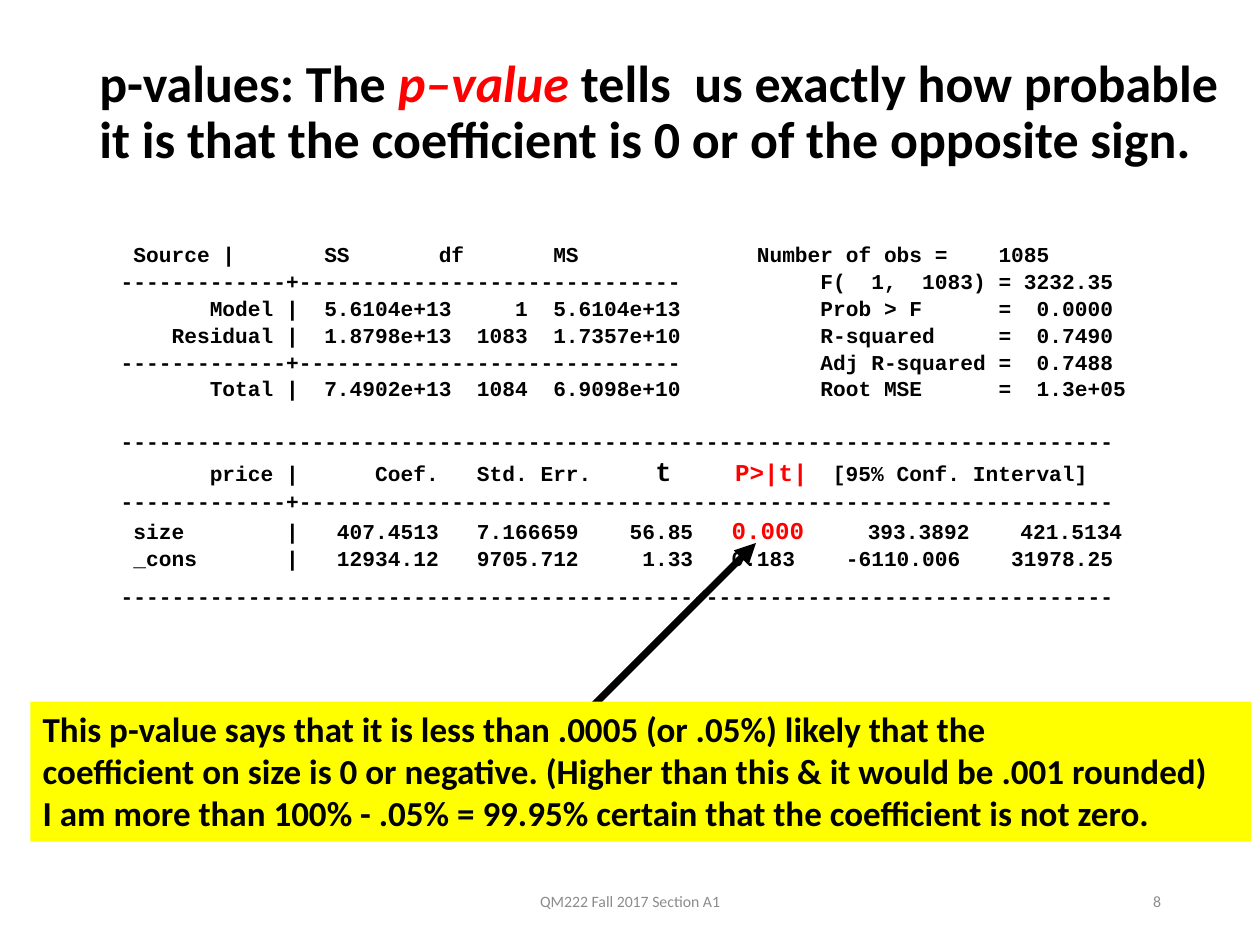
import pptx
import pptx.util
import pptx.dml.color
import pptx.enum.shapes
import pptx.enum.text
import pptx.oxml
import pptx.oxml.ns

Pt = pptx.util.Pt
ALIGN = pptx.enum.text.PP_ALIGN
ANCHOR = pptx.enum.text.MSO_ANCHOR

THEME = {
    "black": "000000", "red": "FF0000", "yellow": "FFFF00", "grey": "8C8C8C",
    "sans": "Calibri", "mono": "Courier New",
    "title": 29.7, "output": 12.1, "p_value": 13.8, "t": 15.4,
    "callout": 20, "footer": 9,
}

# Content: a paragraph is a list of (text, format changes) spans
P_VALUE = {"size": THEME["p_value"], "color": THEME["red"]}
TITLE = [[
    ("p-values: The ", {}),
    ("p–value", {"color": THEME["red"], "italic": True}),
    (" tells  us exactly how probable it is that the coefficient is 0 or of the opposite sign.", {}),
]]
RULE = "-" * 78
SPLIT = "-" * 13 + "+"
SHORT_RULE = SPLIT + "-" * 30
REGRESSION = [
    " Source |       SS       df       MS              Number of obs =    1085",
    SHORT_RULE + "           F(  1,  1083) = 3232.35",
    "       Model |  5.6104e+13     1  5.6104e+13           Prob > F      =  0.0000",
    "    Residual |  1.8798e+13  1083  1.7357e+10           R-squared     =  0.7490",
    SHORT_RULE + "           Adj R-squared =  0.7488",
    "       Total |  7.4902e+13  1084  6.9098e+10           Root MSE      =  1.3e+05",
    RULE,
    [("       price |      Coef.   Std. Err.     ", {}), ("t", {"size": THEME["t"]}),
     ("     ", {}), ("P>|t|", P_VALUE), ("  [95% Conf. Interval]", {})],
    SPLIT + "-" * 64,
    [(" size        |   407.4513   7.166659    56.85   ", {}), ("0.000", P_VALUE),
     ("     393.3892    421.5134", {})],
    " _cons       |   12934.12   9705.712     1.33   0.183    -6110.006    31978.25",
    RULE,
]
LINE_GAP = 0.8
WIDE_GAPS = {6: 15.3, 11: 7}  # space above the two full-width rules
CALLOUT = [
    "This p-value says that it is less than .0005 (or .05%) likely that the",
    "coefficient on size is 0 or negative. (Higher than this & it would be .001 rounded)",
    "I am more than 100% - .05% = 99.95% certain that the coefficient is not zero.",
]
FOOTERS = [  # text, left, width, alignment
    ("QM222 Fall 2017 Section A1", 238.5, 243, ALIGN.CENTER),
    ("8", 508.5, 162, ALIGN.RIGHT),
]


def rgb(name):
    return pptx.dml.color.RGBColor.from_string(name)


def write(box, paragraphs, size, font, color=THEME["black"], bold=True,
          align=ALIGN.LEFT, anchor=ANCHOR.TOP, wrap=True):
    frame = box.text_frame
    frame.word_wrap = wrap
    frame.vertical_anchor = anchor
    for index, content in enumerate(paragraphs):
        para = frame.paragraphs[0] if index == 0 else frame.add_paragraph()
        para.alignment = align
        for text, changes in [(content, {})] if isinstance(content, str) else content:
            span = para.add_run()
            span.text = text
            span.font.name = font
            span.font.size = Pt(changes.get("size", size))
            span.font.bold = bold
            span.font.italic = changes.get("italic", False)
            span.font.color.rgb = rgb(changes.get("color", color))
    return frame


def add_text(page, area, *content, **options):
    box = page.shapes.add_textbox(*map(Pt, area))
    return write(box, *content, **options)


deck = pptx.Presentation()
deck.slide_width, deck.slide_height = Pt(720), Pt(540)
page = deck.slides.add_slide(deck.slide_layouts[6])

# Title
title = add_text(page, (49.7, 28.8, 670.3, 104.4), TITLE, THEME["title"],
                 THEME["sans"], anchor=ANCHOR.MIDDLE)
title.margin_bottom = Pt(36)
title.paragraphs[0].line_spacing = 0.9

# Regression output
output = add_text(page, (61.9, 133.2, 625.7, 360), REGRESSION, THEME["output"], THEME["mono"])
output.margin_top = Pt(5)
for index, para in enumerate(output.paragraphs):
    para.space_before = Pt(WIDE_GAPS.get(index, LINE_GAP))

# Arrow from the callout to the p-value
arrow = page.shapes.add_connector(
    pptx.enum.shapes.MSO_CONNECTOR.STRAIGHT, Pt(334), Pt(408.2), Pt(432), Pt(310.3))
arrow.line.color.rgb = rgb(THEME["black"])
arrow.line.width = Pt(4)
head = pptx.oxml.parse_xml(
    '<a:tailEnd %s type="triangle"/>' % pptx.oxml.ns.nsdecls("a"))
arrow.line._get_or_add_ln().append(head)
arrow._element.spPr.append(
    pptx.oxml.parse_xml("<a:effectLst %s/>" % pptx.oxml.ns.nsdecls("a")))

# Callout
callout = page.shapes.add_shape(
    pptx.enum.shapes.MSO_SHAPE.RECTANGLE, Pt(17.3), Pt(401), Pt(697.7), Pt(80))
callout.shadow.inherit = False
callout.fill.solid()
callout.fill.fore_color.rgb = rgb(THEME["yellow"])
callout.line.fill.background()
write(callout, CALLOUT, THEME["callout"], THEME["sans"], wrap=False)

# Footer and page number
for text, left, width, align in FOOTERS:
    add_text(page, (left, 500.4, width, 28.8), [text], THEME["footer"], THEME["sans"],
             color=THEME["grey"], bold=False, align=align, anchor=ANCHOR.MIDDLE)

deck.save("out.pptx")
